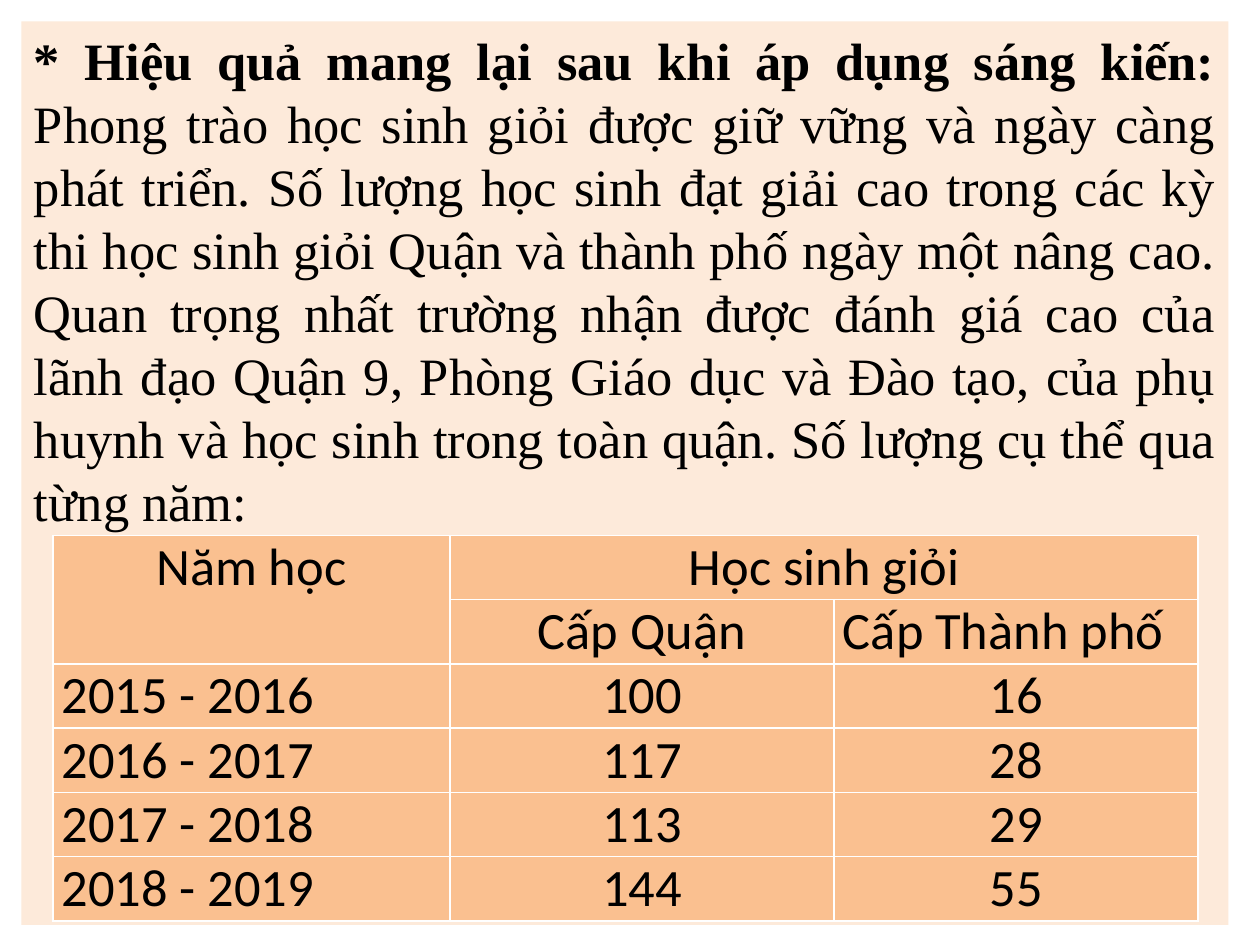
import pptx
import pptx.dml.color
import pptx.enum.shapes
import pptx.enum.text
import pptx.oxml
import pptx.oxml.ns
import pptx.util

Inches = pptx.util.Inches
Pt = pptx.util.Pt
ALIGN = pptx.enum.text.PP_ALIGN

COLORS = {"panel": "FDEADA", "cell": "FAC090", "border": "FFFFFF", "text": "000000"}
SIZE = 30

HEADING = "* Hiệu quả mang lại sau khi áp dụng sáng kiến:"
BODY = (
    " Phong trào học sinh giỏi được giữ vững và ngày càng phát triển."
    " Số lượng học sinh đạt giải cao trong các kỳ thi học sinh giỏi Quận"
    " và thành phố ngày một nâng cao. Quan trọng nhất trường nhận được"
    " đánh giá cao của lãnh đạo Quận 9, Phòng Giáo dục và Đào tạo, của phụ"
    " huynh và học sinh trong toàn quận. Số lượng cụ thể qua từng năm: "
)
ROWS = [
    ("Năm học", "Học sinh giỏi", ""),
    ("", "Cấp Quận", "Cấp Thành phố"),
    ("2015 - 2016", "100", "16"),
    ("2016 - 2017", "117", "28"),
    ("2017 - 2018", "113", "29"),
    ("2018 - 2019", "144", "55"),
]
COL_WIDTHS = (3.15, 3.05, 2.89)
ROW_HEIGHT = 0.51


def rgb(name):
    return pptx.dml.color.RGBColor.from_string(COLORS[name])


def add_run(p, text, font, bold=False):
    r = p.add_run()
    r.text = text
    r.font.name = font
    r.font.size = Pt(SIZE)
    r.font.bold = bold
    r.font.color.rgb = rgb("text")


def add_panel(s):
    sp = s.shapes.add_shape(
        pptx.enum.shapes.MSO_SHAPE.RECTANGLE,
        Inches(0.17), Inches(0.17), Inches(9.58), Inches(7.17),
    )
    sp.shadow.inherit = False
    sp.fill.solid()
    sp.fill.fore_color.rgb = rgb("panel")
    sp.line.fill.background()
    tf = sp.text_frame
    tf.word_wrap = True
    tf.vertical_anchor = pptx.enum.text.MSO_ANCHOR.TOP
    p = tf.paragraphs[0]
    p.alignment = ALIGN.JUSTIFY
    add_run(p, HEADING, "Times New Roman", bold=True)
    add_run(p, BODY, "Times New Roman")


def set_borders(cell):
    tc_pr = cell._tc.get_or_add_tcPr()
    for i, side in enumerate(("lnL", "lnR", "lnT", "lnB")):
        tc_pr.insert(i, pptx.oxml.parse_xml(
            f'<a:{side} {pptx.oxml.ns.nsdecls("a")} w="{Pt(1)}"><a:solidFill>'
            f'<a:srgbClr val="{COLORS["border"]}"/></a:solidFill></a:{side}>'
        ))


def fill_cell(cell, text, alignment):
    cell.fill.solid()
    cell.fill.fore_color.rgb = rgb("cell")
    cell.margin_left = cell.margin_right = Inches(0.07)
    cell.margin_top = cell.margin_bottom = 0
    set_borders(cell)
    if text:
        p = cell.text_frame.paragraphs[0]
        p.alignment = alignment
        add_run(p, text, "Calibri")


def add_results_table(s):
    table = s.shapes.add_table(
        len(ROWS), len(COL_WIDTHS), Inches(0.42), Inches(4.25),
        Inches(sum(COL_WIDTHS)), Inches(ROW_HEIGHT * len(ROWS)),
    ).table
    for column, width in zip(table.columns, COL_WIDTHS):
        column.width = Inches(width)
    for i, values in enumerate(ROWS):
        table.rows[i].height = Inches(ROW_HEIGHT)
        for j, text in enumerate(values):
            # School years and the last column heading are justified
            justified = (j == 0 and i > 0) or (i, j) == (1, 2)
            fill_cell(table.cell(i, j), text,
                      ALIGN.JUSTIFY if justified else ALIGN.CENTER)
    # Two-level header
    table.cell(0, 0).merge(table.cell(1, 0))
    table.cell(0, 1).merge(table.cell(0, 2))


def main():
    prs = pptx.Presentation()
    prs.slide_width = Inches(10)
    prs.slide_height = Inches(7.5)
    s = prs.slides.add_slide(prs.slide_layouts[6])
    add_panel(s)
    add_results_table(s)
    prs.save("out.pptx")


if __name__ == "__main__":
    main()
